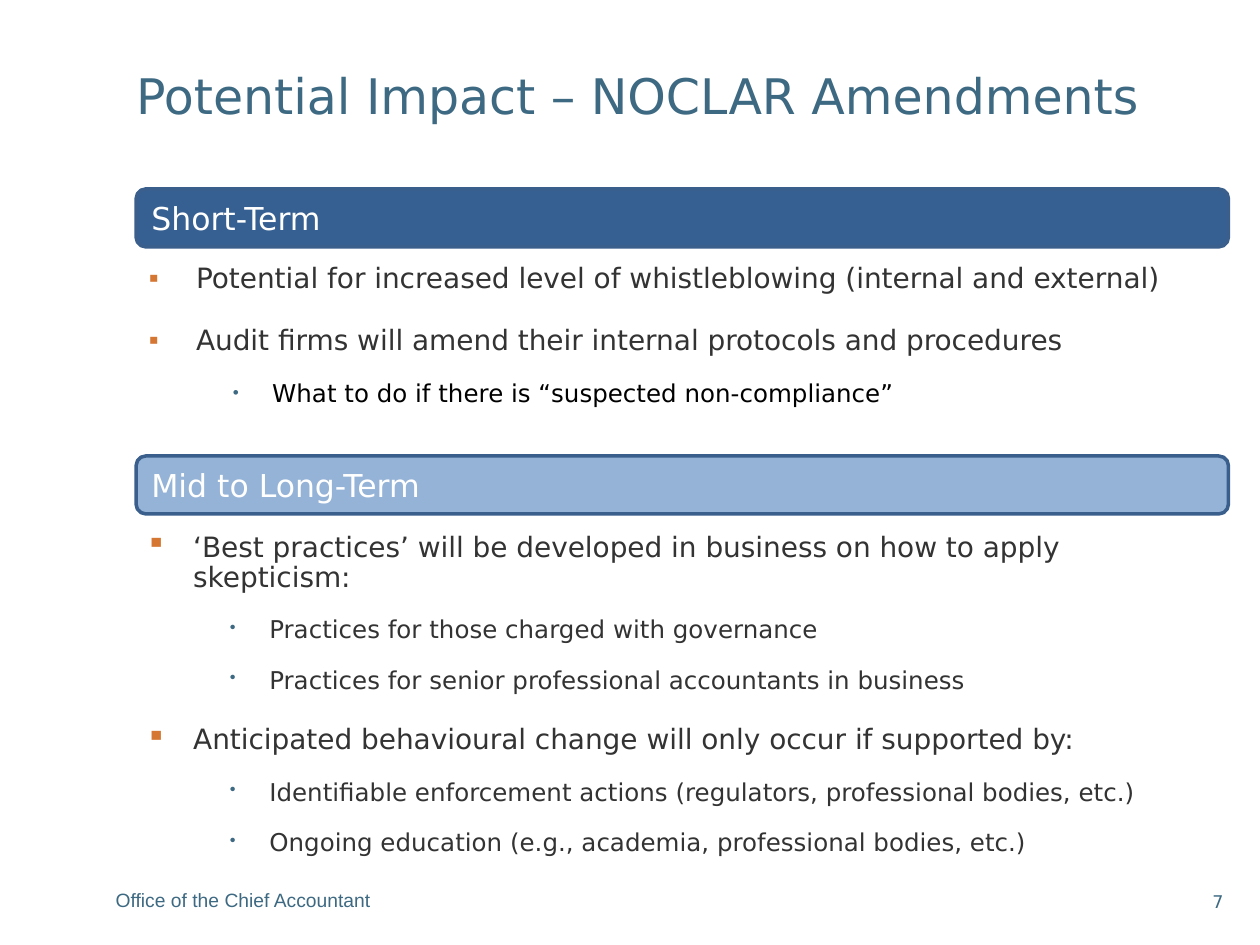
from lxml.etree import SubElement as Sub
from pptx import Presentation
from pptx.dml.color import RGBColor as RGB
from pptx.enum.shapes import MSO_SHAPE as Kind
from pptx.enum.text import MSO_ANCHOR as Anchor, MSO_AUTO_SIZE as Fit, PP_ALIGN as Align
from pptx.oxml.ns import qn
from pptx.util import Pt

FONT = "DejaVu Sans"
HUE = {"teal": "3D6982", "dark": "376092", "light": "95B3D7", "edge": "3A5F8C",
       "rust": "D57632", "text": "333333", "black": "000000", "white": "FFFFFF"}

TITLE = "Potential Impact – NOCLAR Amendments"
BARS = [("Short-Term", "dark", 108), ("Mid to Long-Term", "light", 260.6)]

# level, text, space before, space after, colour
SHORT = [
    (0, "Potential for increased level of whistleblowing (internal and external)", 0, 6, "text"),
    (0, "Audit firms will amend their internal protocols and procedures", 12, 6, "text"),
    (1, "What to do if there is “suspected non-compliance”", 6, 6, "black"),
]
LONG = [
    (0, "‘Best practices’ will be developed in business on how to apply skepticism:", 0, 6, "text"),
    (1, "Practices for those charged with governance", 6, 6, "text"),
    (1, "Practices for senior professional accountants in business", 6, 6, "text"),
    (0, "Anticipated behavioural change will only occur if supported by:", 12, 12, "text"),
    (1, "Identifiable enforcement actions (regulators, professional bodies, etc.)", 0, 12, "text"),
    (1, "Ongoing education (e.g., academia, professional bodies, etc.)", 0, 12, "text"),
]
# text, box, size, font, alignment
NOTES = [
    ("Office of the Chief Accountant", (59, 504, 602.6, 20.2), 11, "Arial", Align.LEFT),
    ("7", (674.6, 505.4, 31.7, 19.4), 10, FONT, Align.RIGHT),
]
# margin, hanging indent, bullet, bullet colour, bullet percent, text size, line spacing
LEVELS = [
    (27, -27, "▪", "rust", 100, 16, 0.9),
    (70.5, -22.5, "•", "teal", 70, 14, 1.0),
]


def color(name):
    return RGB.from_string(HUE[name])


def place(shape, box):
    shape.left, shape.top, shape.width, shape.height = map(Pt, box)


def style(para, size, hue, font=FONT, align=Align.LEFT):
    para.alignment = align
    para.font.size = Pt(size)
    para.font.name = font
    para.font.color.rgb = color(hue)


def bullet(para, left, hang, mark, hue, scale):
    props = para._p.get_or_add_pPr()
    props.set("marL", str(Pt(left)))
    props.set("indent", str(Pt(hang)))
    Sub(Sub(props, qn("a:buClr")), qn("a:srgbClr"), val=HUE[hue])
    Sub(props, qn("a:buSzPct"), val=str(scale * 1000))
    Sub(props, qn("a:buChar"), char=mark)


def fill_list(frame, items):
    frame.word_wrap = True
    frame.auto_size = Fit.NONE
    for i, (level, text, before, after, hue) in enumerate(items):
        para = frame.add_paragraph() if i else frame.paragraphs[0]
        para.text = text
        para.level = level
        *marks, size, lead = LEVELS[level]
        bullet(para, *marks)
        para.line_spacing = lead
        para.space_before, para.space_after = Pt(before), Pt(after)
        style(para, size, hue)


def add_bar(slide, text, fill, top):
    bar = slide.shapes.add_shape(Kind.ROUNDED_RECTANGLE, Pt(77.8), Pt(top), Pt(624.2), Pt(33.1))
    bar.shadow.inherit = False
    bar.fill.solid()
    bar.fill.fore_color.rgb = color(fill)
    bar.line.color.rgb = color("edge")
    bar.line.width = Pt(2)
    frame = bar.text_frame
    frame.text = text
    frame.vertical_anchor = Anchor.MIDDLE
    style(frame.paragraphs[0], 18, "white")


def add_note(slide, text, box, size, font, align):
    frame = slide.shapes.add_textbox(*map(Pt, box)).text_frame
    frame.word_wrap = True
    frame.text = text
    style(frame.paragraphs[0], size, "teal", font, align)


def main():
    deck = Presentation()
    deck.slide_width, deck.slide_height = Pt(720), Pt(540)
    slide = deck.slides.add_slide(deck.slide_layouts[1])

    title, body = slide.placeholders
    place(title, (70.6, 31.7, 607.7, 45.4))
    title.text_frame.text = TITLE
    title.text_frame.auto_size = Fit.NONE
    title.text_frame.vertical_anchor = Anchor.MIDDLE
    style(title.text_frame.paragraphs[0], 28, "teal")

    place(body, (77.8, 147.6, 625.7, 103))
    fill_list(body.text_frame, SHORT)
    for bar in BARS:
        add_bar(slide, *bar)
    later = slide.shapes.add_textbox(*map(Pt, (76.3, 301, 625.7, 192.2)))
    fill_list(later.text_frame, LONG)
    for note in NOTES:
        add_note(slide, *note)

    deck.save("out.pptx")


if __name__ == "__main__":
    main()
